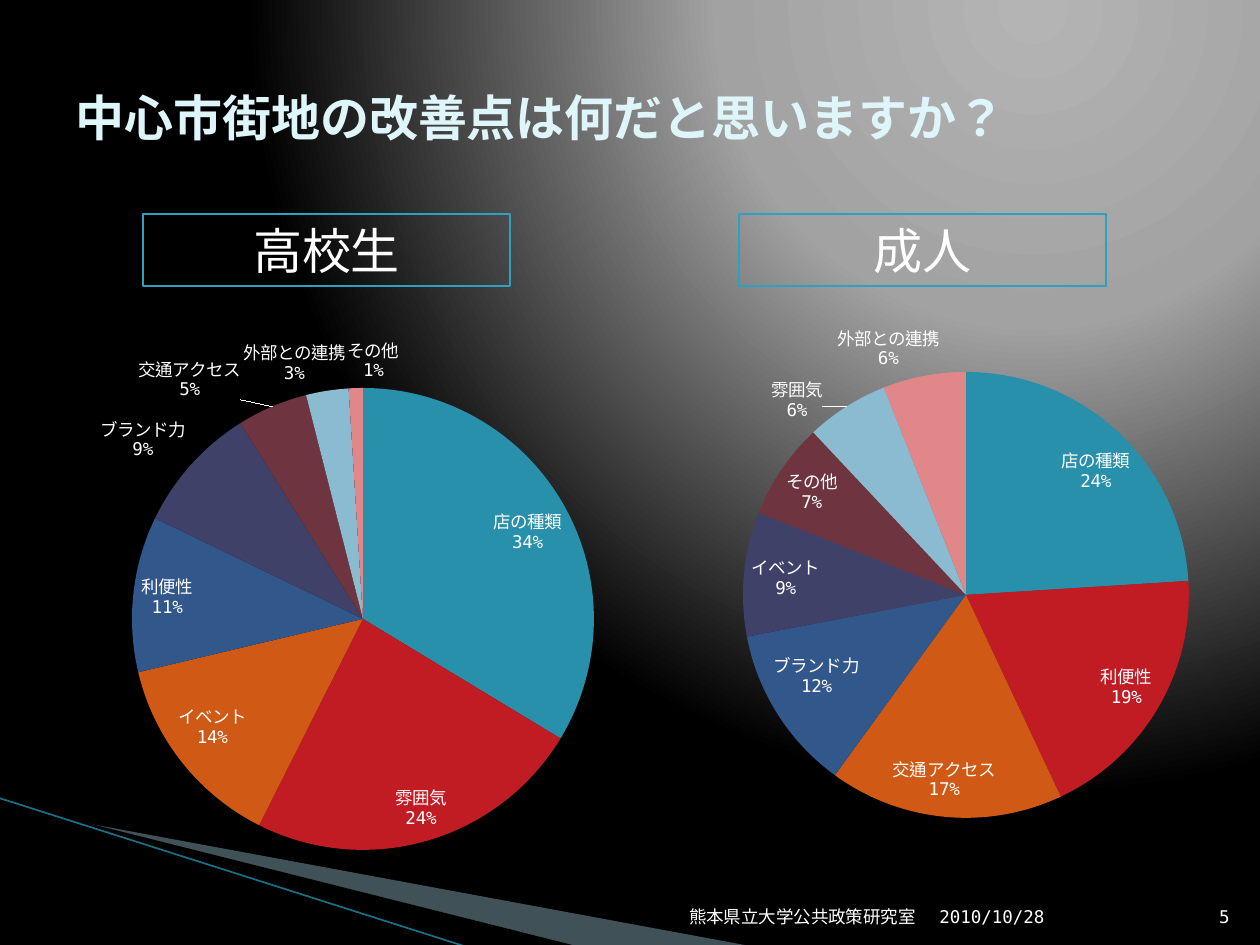
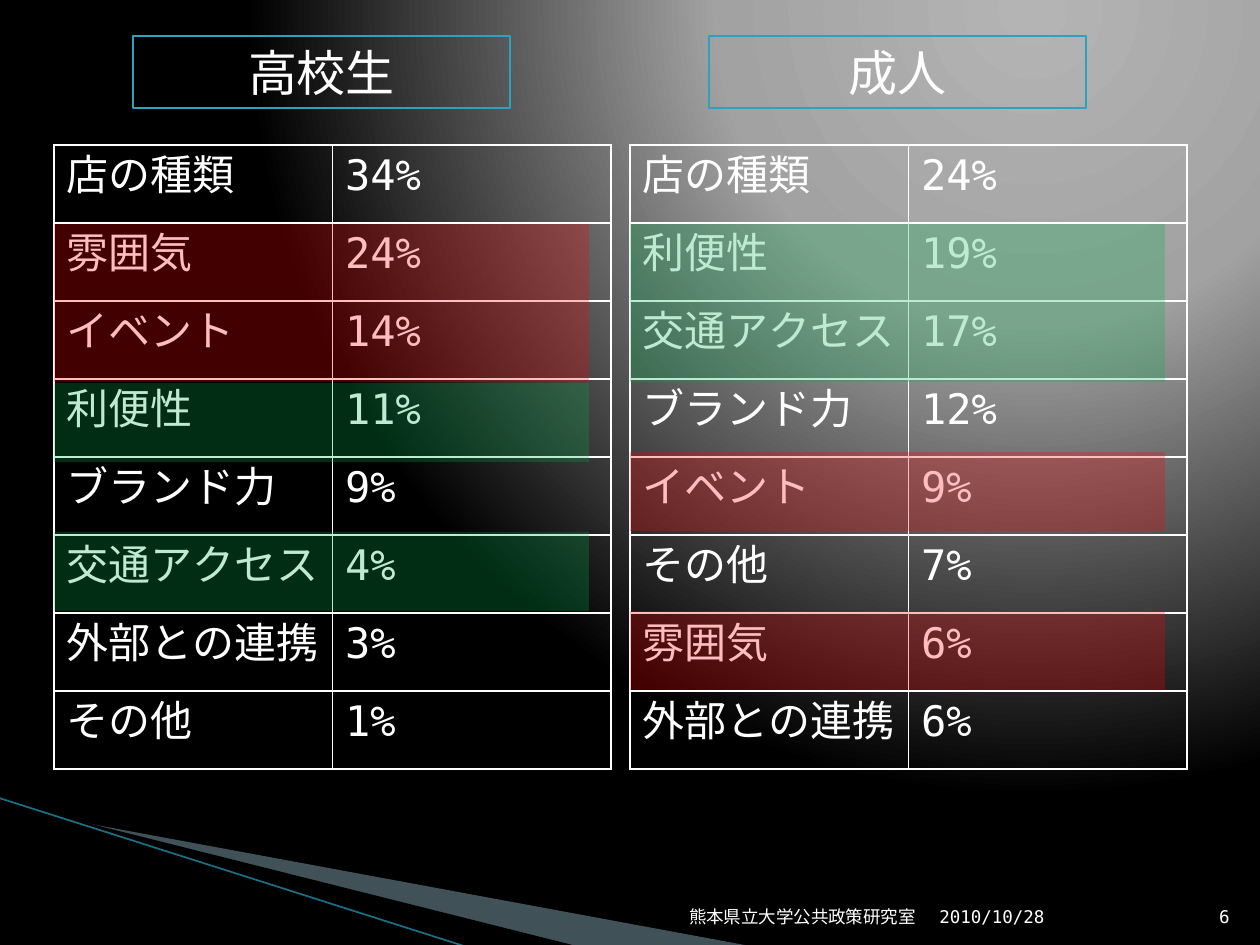
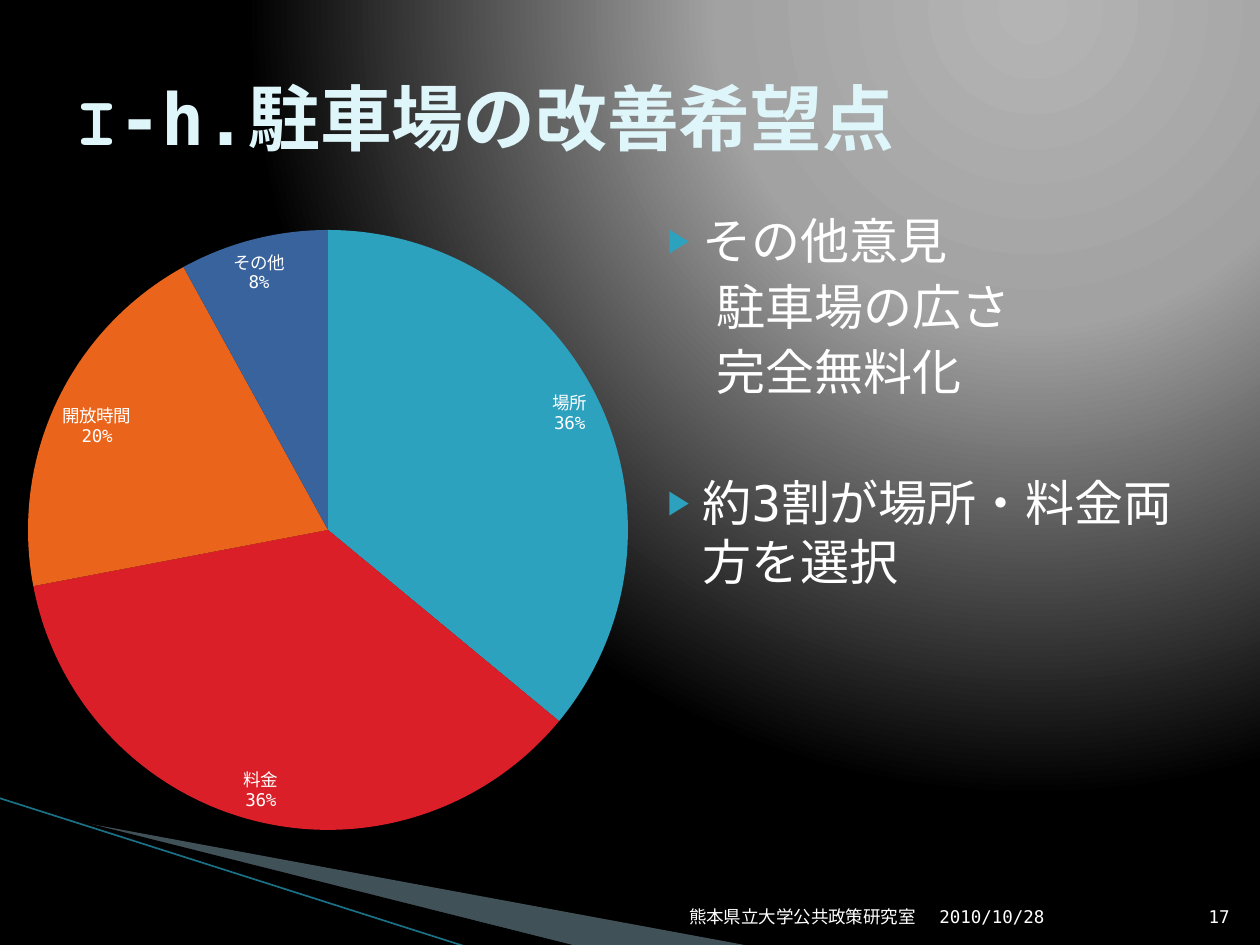
from pptx import Presentation
from pptx import util as u
from pptx.chart.data import CategoryChartData
from pptx.dml.color import RGBColor
from pptx.enum import chart as charts, lang, shapes, text
from pptx.oxml import parse_xml
from pptx.oxml.ns import nsdecls, qn

SCALE = 914400 / 126  # EMU per px
FONT = "DejaVu Sans Mono"
WHITE, TEAL, TITLE = "FFFFFF", "2DA2BF", "DEF5FA"
RED, GREEN = "FF0000", "00B050"
PIE_COLORS = ["2DA2BF", "DA1F28", "EB641B", "39639D"]
PIE_COLORS_8 = ["2890AB", "C11B23", "D05916", "32578B",
                "3F4169", "6E3541", "8ABBD0", "E28789"]
LEFT, CENTER, RIGHT = text.PP_ALIGN.LEFT, text.PP_ALIGN.CENTER, text.PP_ALIGN.RIGHT
TOP, MIDDLE, BOTTOM = (text.MSO_ANCHOR.TOP, text.MSO_ANCHOR.MIDDLE,
                       text.MSO_ANCHOR.BOTTOM)


def px(*lengths):
    return [u.Emu(round(n * SCALE)) for n in lengths]


def rgb(value):
    return RGBColor.from_string(value)


def a_xml(tag, attrs="", inner=""):
    return parse_xml(f'<a:{tag} {nsdecls("a")} {attrs}>{inner}</a:{tag}>')


def write(p, content, size=28, color=WHITE, bold=False, align=LEFT, before=0):
    """Put one formatted run into a paragraph."""
    p.alignment = align
    p.space_before = u.Pt(before)
    r = p.add_run()
    r.text = content
    font = r.font
    font.size, font.bold, font.name = u.Pt(size), bold, FONT
    font.color.rgb = rgb(color)
    font.language_id = lang.MSO_LANGUAGE_ID.JAPANESE
    r._r.get_or_add_rPr().find(qn("a:latin")).addnext(
        a_xml("ea", f'typeface="{FONT}"'))


class Deck:
    def __init__(self):
        self.prs = Presentation()
        self.prs.slide_width, self.prs.slide_height = px(1260, 945)
        self.s = None
        self.background()

    def background(self):
        master = self.prs.slide_master
        master.background.fill.gradient()
        stops = "".join(
            f'<a:gs pos="{pos * 1000}"><a:srgbClr val="{color}"/></a:gs>'
            for pos, color in [(0, "B4B4B4"), (40, "A2A2A2"), (100, "000000")])
        grad = next(master.element.iter(qn("a:gradFill")))
        grad.getparent().replace(grad, a_xml(
            "gradFill", 'rotWithShape="1"',
            f'<a:gsLst>{stops}</a:gsLst><a:path path="circle">'
            '<a:fillToRect l="65000" t="0" r="0" b="98000"/></a:path>'))

    def slide(self, layout, number):
        self.s = self.prs.slides.add_slide(self.prs.slide_layouts[layout])
        # Corner wedges and line
        self.wedge([(69, 820), (750, 946), (575, 946), (69, 819)], "A0CBDC", 40)
        self.wedge([(67, 818), (576, 946), (469, 947), (68, 819)], "000000")
        line = self.s.shapes.add_connector(
            shapes.MSO_CONNECTOR.STRAIGHT, *px(-1, 798, 467, 947))
        line.line.color.rgb, line.line.width = rgb("1A7186"), u.Pt(0.95)
        line._element.spPr.append(a_xml("effectLst"))
        # Footer
        self.footer("熊本県立大学公共政策研究室", 604, 324, RIGHT)
        self.footer("2010/10/28", 927, 265, LEFT)
        self.footer(str(number), 1192, 50, RIGHT)

    def fill(self, sp, color, alpha=100):
        sp.shadow.inherit = False
        sp.line.fill.background()
        sp.fill.solid()
        sp.fill.fore_color.rgb = rgb(color)
        if alpha < 100:
            next(sp._element.spPr.iter(qn("a:srgbClr"))).append(
                a_xml("alpha", f'val="{alpha * 1000}"'))

    def wedge(self, points, color, alpha=100):
        builder = self.s.shapes.build_freeform(*points[0], scale=SCALE)
        builder.add_line_segments(points[1:])
        self.fill(builder.convert_to_shape(), color, alpha)

    def footer(self, content, x, w, align):
        tf = self.s.shapes.add_textbox(*px(x, 883, w, 50)).text_frame
        tf.word_wrap, tf.vertical_anchor = True, BOTTOM
        write(tf.paragraphs[0], content, size=10, align=align)

    def place(self, sp, box, anchor):
        sp.left, sp.top, sp.width, sp.height = px(*box)
        tf = sp.text_frame
        tf.auto_size, tf.vertical_anchor = text.MSO_AUTO_SIZE.NONE, anchor
        return tf

    def title(self, content, size):
        tf = self.place(self.s.shapes.title, (63, 38, 1134, 157), MIDDLE)
        write(tf.paragraphs[0], content, size=size, color=TITLE, bold=True)

    def body(self, items, box):
        """Items are (text, has bullet, space before)."""
        tf = self.place(self.s.placeholders[1], box, TOP)
        for i, (content, bullet, before) in enumerate(items):
            p = tf.paragraphs[0] if i == 0 else tf.add_paragraph()
            pPr = p._p.get_or_add_pPr()
            left, indent = px(50, -35) if bullet else px(64, 0)
            pPr.set("marL", str(left))
            pPr.set("indent", str(indent))
            if bullet:
                pPr.append(a_xml("buClr", "", f'<a:srgbClr val="{TEAL}"/>'))
                pPr.append(a_xml("buSzPct", 'val="68000"'))
                pPr.append(a_xml("buChar", 'char="▶"'))
            else:
                pPr.append(a_xml("buNone"))
            write(p, content, before=before)

    def heading(self, content, x, y, w):
        sp = self.s.shapes.add_shape(shapes.MSO_SHAPE.RECTANGLE, *px(x, y, w, 72))
        sp.shadow.inherit = False
        sp.fill.background()
        sp.line.color.rgb, sp.line.width = rgb(TEAL), u.Pt(0.75)
        write(sp.text_frame.paragraphs[0], content, align=CENTER)

    def highlight(self, x, y, color):
        sp = self.s.shapes.add_shape(shapes.MSO_SHAPE.RECTANGLE, *px(x, y, 535, 79))
        self.fill(sp, color, 26)

    def table(self, rows, x, y):
        table = self.s.shapes.add_table(
            len(rows), 2, *px(x, y, 557, 78 * len(rows))).table
        table.first_row = table.horz_banding = False
        for r, row in enumerate(rows):
            for c, value in enumerate(row):
                cell = table.cell(r, c)
                write(cell.text_frame.paragraphs[0], value, size=24)
                tcPr = cell._tc.get_or_add_tcPr()
                for side in ("lnL", "lnR", "lnT", "lnB"):
                    tcPr.append(a_xml(
                        side, 'w="12700"', '<a:solidFill>'
                        f'<a:srgbClr val="{WHITE}"/></a:solidFill>'))
                cell.fill.background()

    def pie(self, data, box, circle, colors):
        """Circle is (centre x, centre y, radius) on the slide."""
        cd = CategoryChartData()
        cd.categories = [name for name, _ in data]
        cd.add_series("Series 1", [value for _, value in data])
        chart = self.s.shapes.add_chart(
            charts.XL_CHART_TYPE.PIE, *px(*box), cd).chart
        chart.has_legend = chart.has_title = False
        plot = chart.plots[0]
        plot.vary_by_categories = True
        for i, color in enumerate(colors):
            fill = plot.series[0].points[i].format.fill
            fill.solid()
            fill.fore_color.rgb = rgb(color)
        # Labels
        labels = plot.series[0].data_labels
        labels.show_value = False
        labels.show_category_name = labels.show_percentage = True
        labels.number_format, labels.number_format_is_linked = "0%", False
        labels.position = charts.XL_LABEL_POSITION.BEST_FIT
        for font in (chart.font, labels.font):
            font.size, font.name = u.Pt(10), FONT
            font.color.rgb = rgb(WHITE)
        for latin in list(chart.element.iter(qn("a:latin"))):
            latin.addnext(a_xml("ea", f'typeface="{FONT}"'))
        next(chart.element.iter(qn("c:showBubbleSize"))).addnext(
            parse_xml(f'<c:separator {nsdecls("c")}>\n</c:separator>'))
        # Plot area
        x, y, w, h = box
        cx, cy, radius = circle
        parts = {"x": (cx - radius - x) / w, "y": (cy - radius - y) / h,
                 "w": 2 * radius / w, "h": 2 * radius / h}
        modes = "".join(f'<c:{k}Mode val="edge"/>' for k in "xy")
        sizes = "".join(f'<c:{k} val="{v:.4f}"/>' for k, v in parts.items())
        area = next(chart.element.iter(qn("c:plotArea")))
        for old in area.findall(qn("c:layout")):
            area.remove(old)
        area.insert(0, parse_xml(
            f'<c:layout {nsdecls("c")}><c:manualLayout>'
            f'<c:layoutTarget val="inner"/>{modes}{sizes}'
            '</c:manualLayout></c:layout>'))


STUDENTS = [("店の種類", 34), ("雰囲気", 24), ("イベント", 14), ("利便性", 11),
            ("ブランド力", 9), ("交通アクセス", 5), ("外部との連携", 3), ("その他", 1)]
ADULTS = [("店の種類", 24), ("利便性", 19), ("交通アクセス", 17), ("ブランド力", 12),
          ("イベント", 9), ("その他", 7), ("雰囲気", 6), ("外部との連携", 6)]
PARKING = [("場所", 36), ("料金", 36), ("開放時間", 20), ("その他", 8)]


def percent_rows(data, **changes):
    return [(name, f"{changes.get(name, value)}%") for name, value in data]


def main():
    deck = Deck()

    # Improvement points: pies
    deck.slide(5, 5)
    deck.title("中心市街地の改善点は何だと思いますか？", 28)
    deck.heading("高校生", 143, 214, 367)
    deck.heading("成人", 739, 214, 367)
    deck.pie(STUDENTS, (54, 283, 557, 624), (363, 619, 231), PIE_COLORS_8)
    deck.pie(ADULTS, (650, 283, 557, 624), (966, 595, 223), PIE_COLORS_8)

    # Improvement points: tables
    deck.slide(6, 6)
    deck.table(percent_rows(STUDENTS, 交通アクセス=4), 54, 145)
    deck.table(percent_rows(ADULTS), 630, 145)
    deck.heading("高校生", 133, 36, 377)
    deck.heading("成人", 709, 36, 377)
    for x, color, tops in [(54, RED, (224, 303)), (630, RED, (452, 611)),
                           (630, GREEN, (224, 303)), (54, GREEN, (383, 532))]:
        for y in tops:
            deck.highlight(x, y, color)

    # Parking
    deck.slide(1, 17)
    deck.title("Ⅰ-h.駐車場の改善希望点", 41)
    deck.body([("その他意見", True, 0), ("駐車場の広さ", False, 4),
               ("完全無料化", False, 4), ("約3割が場所・料金両方を選択", True, 41)],
              (640, 204, 557, 624))
    deck.pie(PARKING, (0, 165, 656, 683), (328, 530, 300), PIE_COLORS)

    deck.prs.save("out.pptx")


if __name__ == "__main__":
    main()
